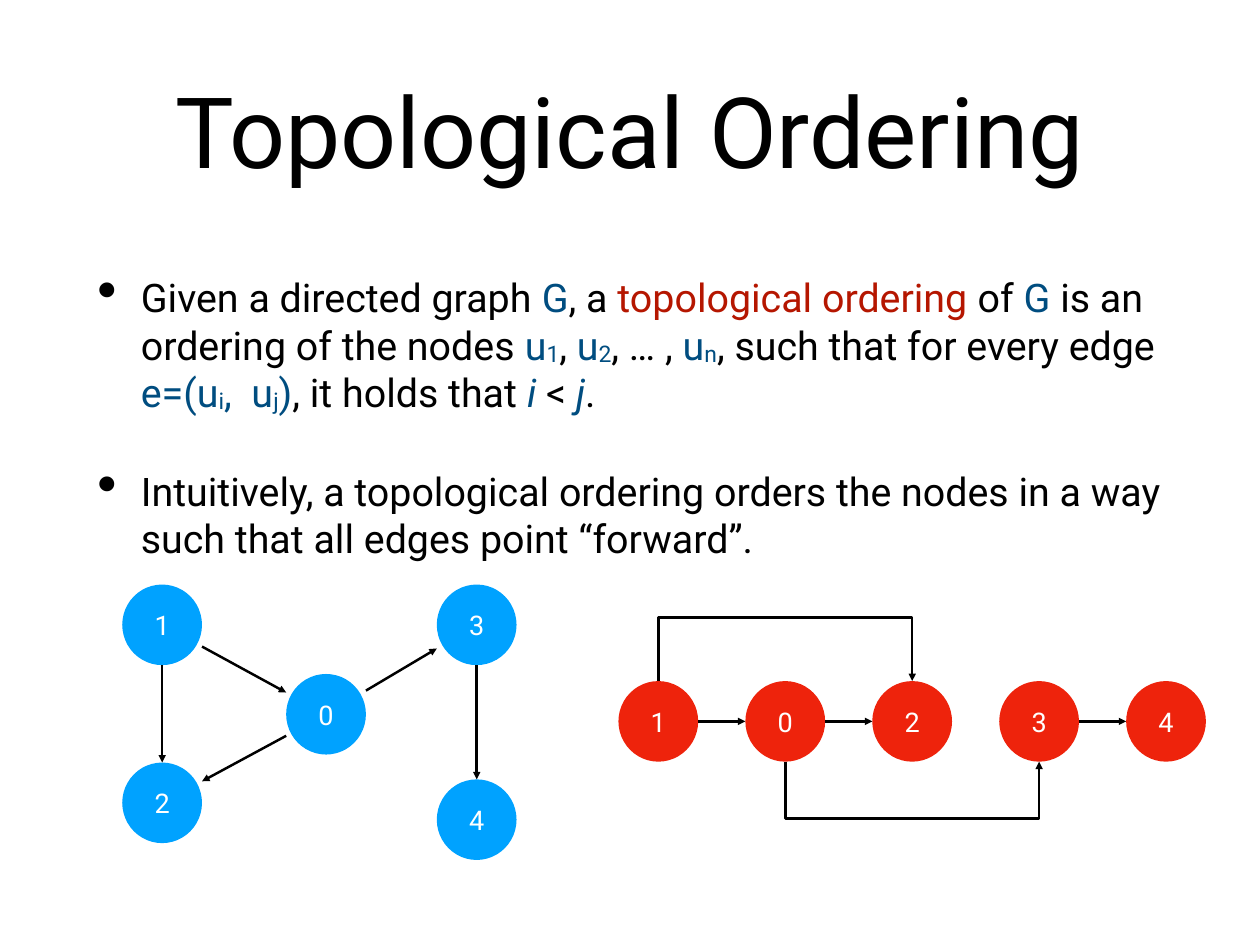
from dataclasses import dataclass

from lxml import etree
from pptx import Presentation
from pptx.dml.color import RGBColor
from pptx.enum.shapes import MSO_CONNECTOR, MSO_SHAPE
from pptx.enum.text import MSO_ANCHOR, PP_ALIGN
from pptx.oxml.ns import qn
from pptx.util import Inches, Pt

STRAIGHT = MSO_CONNECTOR.STRAIGHT
OVAL = MSO_SHAPE.OVAL
MIDDLE = MSO_ANCHOR.MIDDLE
CENTER = PP_ALIGN.CENTER
LEFT = PP_ALIGN.LEFT


@dataclass(frozen=True)
class Theme:
    font: str = "Roboto"
    ink: str = "000000"
    white: str = "FFFFFF"
    symbol: str = "004D80"
    term: str = "B51600"
    graph: str = "00A2FF"
    order: str = "EE230C"
    title_size: int = 80
    body_size: int = 32
    node_size: int = 22
    line_width: int = 2


@dataclass(frozen=True)
class Box:
    left: float
    top: float
    width: float
    height: float

    @property
    def center(self):
        return self.left + self.width / 2, self.top + self.height / 2

    def lengths(self):
        return [Inches(n) for n in (self.left, self.top, self.width, self.height)]


THEME = Theme()
NODE_WIDTH, NODE_HEIGHT = 0.9, 0.91
SYMBOL = {"color": THEME.symbol}
INDEX = {"color": THEME.symbol, "subscript": True}
VARIABLE = {"color": THEME.symbol, "italic": True}
DEFINITION = [
    ("Given a directed graph ", {}), ("G", SYMBOL), (", a ", {}),
    ("topological ordering", {"color": THEME.term}), (" of ", {}), ("G", SYMBOL),
    (" is an ordering of the nodes ", {}),
    ("u", SYMBOL), ("1", INDEX), (", ", {}), ("u", SYMBOL), ("2", INDEX),
    (", … , ", {}), ("u", SYMBOL), ("n", INDEX),
    (", such that for every edge ", {}),
    ("e=(u", SYMBOL), ("i", INDEX), (",  u", SYMBOL), ("j", INDEX), (")", SYMBOL),
    (", it holds that ", {}), ("i", VARIABLE), (" < ", {}), ("j", VARIABLE), (".", {}),
]
INTUITION = [
    ("Intuitively, a topological ordering orders the nodes in a way "
     "such that all edges point “forward”.", {}),
]


def add_span(para, text, size, color=THEME.ink, italic=False, subscript=False):
    span = para.add_run()
    span.text = text
    span.font.name = THEME.font
    span.font.size = Pt(size)
    span.font.italic = italic
    span.font.color.rgb = RGBColor.from_string(color)
    if subscript:
        span._r.get_or_add_rPr().set("baseline", "-6000")


def prepare_frame(shape):
    frame = shape.text_frame
    frame.word_wrap = True
    frame.vertical_anchor = MIDDLE
    frame.margin_left = frame.margin_right = Inches(0.06)
    frame.margin_top = frame.margin_bottom = Inches(0.06)
    return frame


def add_bullet(para):
    properties = para._p.get_or_add_pPr()
    properties.set("marL", str(Inches(0.49)))
    properties.set("indent", str(-Inches(0.49)))
    etree.SubElement(properties, qn("a:buSzPct")).set("val", "145000")
    etree.SubElement(properties, qn("a:buChar")).set("char", "•")


def add_title(page, box):
    para = prepare_frame(page.shapes.add_textbox(*box.lengths())).paragraphs[0]
    para.alignment = CENTER
    add_span(para, "Topological Ordering", THEME.title_size)


def add_body(page, box):
    frame = prepare_frame(page.shapes.add_textbox(*box.lengths()))
    for number, spans in enumerate((DEFINITION, INTUITION)):
        para = frame.add_paragraph() if number else frame.paragraphs[0]
        para.alignment = LEFT
        if number:
            para.space_before = Pt(42)
        add_bullet(para)
        for text, style in spans:
            add_span(para, text, THEME.body_size, **style)


def add_node(page, label, left, top, color):
    box = Box(left, top, NODE_WIDTH, NODE_HEIGHT)
    node = page.shapes.add_shape(OVAL, *box.lengths())
    node.shadow.inherit = False
    node.fill.solid()
    node.fill.fore_color.rgb = RGBColor.from_string(color)
    node.line.fill.background()
    para = prepare_frame(node).paragraphs[0]
    para.alignment = CENTER
    add_span(para, label, THEME.node_size, color=THEME.white)
    return box


def style_arrow(line):
    line.color.rgb = RGBColor.from_string(THEME.ink)
    line.width = Pt(THEME.line_width)
    etree.SubElement(line._get_or_add_ln(), qn("a:tailEnd")).set("type", "triangle")


def add_edge(page, source, target):
    (x1, y1), (x2, y2) = source.center, target.center
    across, down = x2 - x1, y2 - y1
    share = 1 / max(abs(across) / (NODE_WIDTH / 2), abs(down) / (NODE_HEIGHT / 2))
    points = (x1 + share * across, y1 + share * down,
              x2 - share * across, y2 - share * down)
    edge = page.shapes.add_connector(STRAIGHT, *[Inches(n) for n in points])
    style_arrow(edge.line)
    etree.SubElement(edge._element.spPr, qn("a:effectLst"))


def add_detour(page, source, target, level):
    start, end = source.center[0], target.center[0]
    side = source.top if level < source.top else source.top + source.height
    builder = page.shapes.build_freeform(Inches(start), Inches(side))
    corners = ((start, level), (end, level), (end, side))
    builder.add_line_segments([(Inches(x), Inches(y)) for x, y in corners], close=False)
    detour = builder.convert_to_shape()
    detour.fill.background()
    style_arrow(detour.line)
    detour.shadow.inherit = False


def add_graph(page, box):
    offsets = {"1": (0, 0), "2": (0, 2.01), "0": (1.85, 1.01),
               "3": (3.55, 0), "4": (3.55, 2.2)}
    nodes = {label: add_node(page, label, box.left + x, box.top + y, THEME.graph)
             for label, (x, y) in offsets.items()}
    for source, target in ("10", "12", "02", "03", "34"):
        add_edge(page, nodes[source], nodes[target])


def add_ordering(page, box):
    labels = "10234"
    step = (box.width - NODE_WIDTH) / (len(labels) - 1)
    top = box.top + 0.72
    nodes = {label: add_node(page, label, box.left + step * place, top, THEME.order)
             for place, label in enumerate(labels)}
    for source, target in ("10", "02", "34"):
        add_edge(page, nodes[source], nodes[target])
    add_detour(page, nodes["1"], nodes["2"], box.top)
    add_detour(page, nodes["0"], nodes["3"], box.top + box.height)


def main():
    deck = Presentation()
    deck.slide_width, deck.slide_height = Inches(14.22), Inches(10.67)
    page = deck.slides.add_slide(deck.slide_layouts[6])
    page.background.fill.solid()
    page.background.fill.fore_color.rgb = RGBColor.from_string(THEME.white)
    add_title(page, Box(1.04, 0.28, 12.14, 2.36))
    add_body(page, Box(1.04, 2.83, 12.14, 3.77))
    add_ordering(page, Box(6.98, 6.97, 6.63, 2.27))
    add_graph(page, Box(1.38, 6.6, 4.45, 3.11))
    deck.save("out.pptx")


if __name__ == "__main__":
    main()
